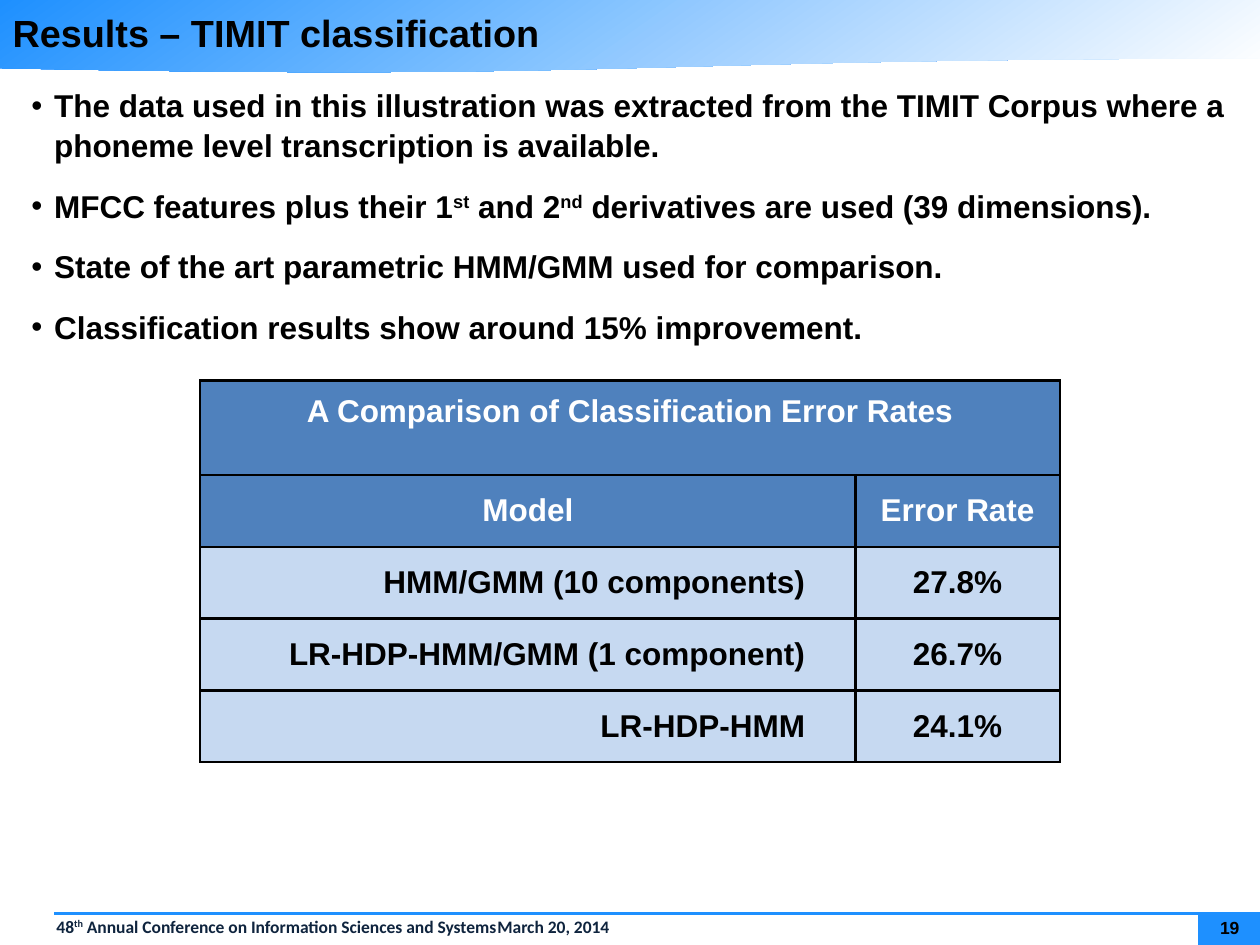
from dataclasses import dataclass

from lxml.etree import SubElement
from pptx import Presentation
from pptx.dml.color import RGBColor
from pptx.enum.shapes import MSO_CONNECTOR, MSO_SHAPE
from pptx.enum.text import MSO_ANCHOR, MSO_AUTO_SIZE, PP_ALIGN
from pptx.oxml.ns import qn
from pptx.util import Inches, Pt


@dataclass(frozen=True)
class Theme:
    accent: str = "1E90FF"
    white: str = "FFFFFF"
    black: str = "000000"
    navy: str = "0F243E"
    header: str = "4F81BD"
    body: str = "C6D9F1"
    title_size: float = 21.6
    text_size: float = 18
    footer_size: float = 10


THEME = Theme()
BULLETS = [
    ["The data used in this illustration was extracted from the TIMIT Corpus "
     "where a phoneme level transcription is available."],
    ["MFCC features plus their 1", "st", " and 2", "nd",
     " derivatives are used (39 dimensions)."],
    ["State of the art parametric HMM/GMM used for comparison."],
    ["Classification results show around 15% improvement."],
]
FOOTER = ["48", "th",
          " Annual Conference on Information Sciences and Systems\tMarch 20, 2014"]
RESULTS = [
    ("Model", "Error Rate"),
    ("HMM/GMM (10 components)", "27.8%"),
    ("LR-HDP-HMM/GMM (1 component)", "26.7%"),
    ("LR-HDP-HMM", "24.1%"),
]


def set_attributes(target, values):
    for name, value in values.items():
        setattr(target, name, value)


def margins(left, top, right, bottom):
    names = ("margin_left", "margin_top", "margin_right", "margin_bottom")
    return dict(zip(names, map(Inches, (left, top, right, bottom))))


def write_runs(paragraph, pieces, size, color=THEME.black, name="Arial"):
    """Write text pieces; every second piece is a superscript."""
    for index, piece in enumerate(pieces):
        run = paragraph.add_run()
        run.text = piece
        set_attributes(run.font, {"size": Pt(size), "name": name, "bold": True})
        run.font.color.rgb = RGBColor.from_string(color)
        if index % 2:
            run.font._element.set("baseline", "30000")


def add_text_box(slide, left, top, width, height, **frame_format):
    frame = slide.shapes.add_textbox(*map(Inches, (left, top, width, height))).text_frame
    set_attributes(frame, {"word_wrap": True, **frame_format})
    return frame


def add_block(slide, preset, left, top, width, height):
    shape = slide.shapes.add_shape(preset, *map(Inches, (left, top, width, height)))
    shape.shadow.inherit = False
    shape.line.fill.background()
    return shape


def add_header(slide):
    band = add_block(slide, MSO_SHAPE.FLOWCHART_DOCUMENT, 0, 0, 10.01, 0.58)
    band.fill.gradient()
    band.fill.gradient_angle = 305
    for stop, color in zip(band.fill.gradient_stops, (THEME.accent, THEME.white)):
        stop.color.rgb = RGBColor.from_string(color)

    # The title sits in front of the band
    title = slide.shapes.title
    title.element.getparent().append(title.element)
    set_attributes(title, {"left": 0, "top": 0,
                           "width": Inches(10), "height": Inches(0.43)})
    set_attributes(title.text_frame, {
        "vertical_anchor": MSO_ANCHOR.TOP, "auto_size": MSO_AUTO_SIZE.NONE,
        **margins(0.1, 0.08, 0.1, 0)})
    paragraph = title.text_frame.paragraphs[0]
    paragraph.alignment = PP_ALIGN.LEFT
    write_runs(paragraph, ["Results – TIMIT classification"], THEME.title_size)


def add_footer(slide):
    block = add_block(slide, MSO_SHAPE.RECTANGLE, 9.51, 7.24, 0.5, 0.26)
    block.fill.solid()
    block.fill.fore_color.rgb = RGBColor.from_string(THEME.accent)

    paragraph = add_text_box(slide, 0.04, 7.23, 9.97, 0.26).paragraphs[0]
    paragraph.line_spacing = 0.95
    properties = paragraph._p.get_or_add_pPr()
    properties.set("marL", str(Inches(0.31)))
    properties.set("indent", "0")
    tabs = SubElement(properties, qn("a:tabLst"))
    SubElement(tabs, qn("a:tab"), pos=str(Inches(9.31)), algn="r")
    write_runs(paragraph, FOOTER, THEME.footer_size, THEME.navy, "Calibri")

    rule = slide.shapes.add_connector(
        MSO_CONNECTOR.STRAIGHT, *map(Inches, (0.43, 7.25, 10, 7.25)))
    rule.line.color.rgb = RGBColor.from_string(THEME.accent)
    rule.line.width = Pt(1.5)
    SubElement(rule.element.spPr, qn("a:effectLst"))

    frame = add_text_box(slide, 9.56, 7.28, 0.4, 0.17,
                         vertical_anchor=MSO_ANCHOR.MIDDLE, **margins(0, 0, 0, 0))
    frame.paragraphs[0].alignment = PP_ALIGN.CENTER
    write_runs(frame.paragraphs[0], ["19"], THEME.footer_size)


def add_bullets(slide):
    frame = add_text_box(slide, 0.25, 0.67, 9.5, 2.02, **margins(0, 0, 0, 0))
    for index, pieces in enumerate(BULLETS):
        paragraph = frame.add_paragraph() if index else frame.paragraphs[0]
        set_attributes(paragraph, {"space_after": Pt(12), "line_spacing": 1.05})
        properties = paragraph._p.get_or_add_pPr()
        properties.set("marL", str(Inches(0.18)))
        properties.set("indent", str(-Inches(0.18)))
        SubElement(properties, qn("a:buFont"), typeface="Arial")
        SubElement(properties, qn("a:buChar"), char="•")
        write_runs(paragraph, pieces, THEME.text_size)


def add_borders(cell):
    properties = cell._tc.get_or_add_tcPr()
    for index, side in enumerate(("lnL", "lnR", "lnT", "lnB")):
        line = properties.makeelement(qn(f"a:{side}"), {"w": str(Pt(1.5))})
        fill = SubElement(line, qn("a:solidFill"))
        SubElement(fill, qn("a:srgbClr"), val=THEME.black)
        properties.insert(index, line)


def format_cell(cell, text, fill, color, alignment, **cell_format):
    set_attributes(cell, cell_format)
    cell.fill.solid()
    cell.fill.fore_color.rgb = RGBColor.from_string(fill)
    paragraph = cell.text_frame.paragraphs[0]
    paragraph.alignment = alignment
    write_runs(paragraph, [text], THEME.text_size, color)


def add_results_table(slide):
    table = slide.shapes.add_table(
        len(RESULTS) + 1, 2, *map(Inches, (1.59, 3.02, 6.82, 3.03))).table
    for column, width in zip(table.columns, (5.2, 1.62)):
        column.width = Inches(width)
    for index, row in enumerate(table.rows):
        row.height = Inches(0.57 if index else 0.75)

    # Caption row across both columns
    table.cell(0, 0).merge(table.cell(0, 1))
    format_cell(table.cell(0, 0), "A Comparison of Classification Error Rates",
                THEME.header, THEME.white, PP_ALIGN.CENTER,
                **margins(0.2, 0.11, 0.2, 0.11))

    # Column heads, then one row per model
    for row, values in enumerate(RESULTS, start=1):
        is_head = row == 1
        fill, color = ((THEME.header, THEME.white) if is_head
                       else (THEME.body, THEME.black))
        for column, text in enumerate(values):
            is_model = column == 0 and not is_head
            format_cell(table.cell(row, column), text, fill, color,
                        PP_ALIGN.RIGHT if is_model else PP_ALIGN.CENTER,
                        vertical_anchor=MSO_ANCHOR.MIDDLE,
                        **margins(0.07, 0, 0.4 if is_model else 0.07, 0))
    for cell in table.iter_cells():
        add_borders(cell)


def main():
    presentation = Presentation()
    presentation.slide_width = Inches(10)
    presentation.slide_height = Inches(7.5)
    slide = presentation.slides.add_slide(presentation.slide_layouts[5])
    add_header(slide)
    add_footer(slide)
    add_bullets(slide)
    add_results_table(slide)
    presentation.save("out.pptx")


if __name__ == "__main__":
    main()
